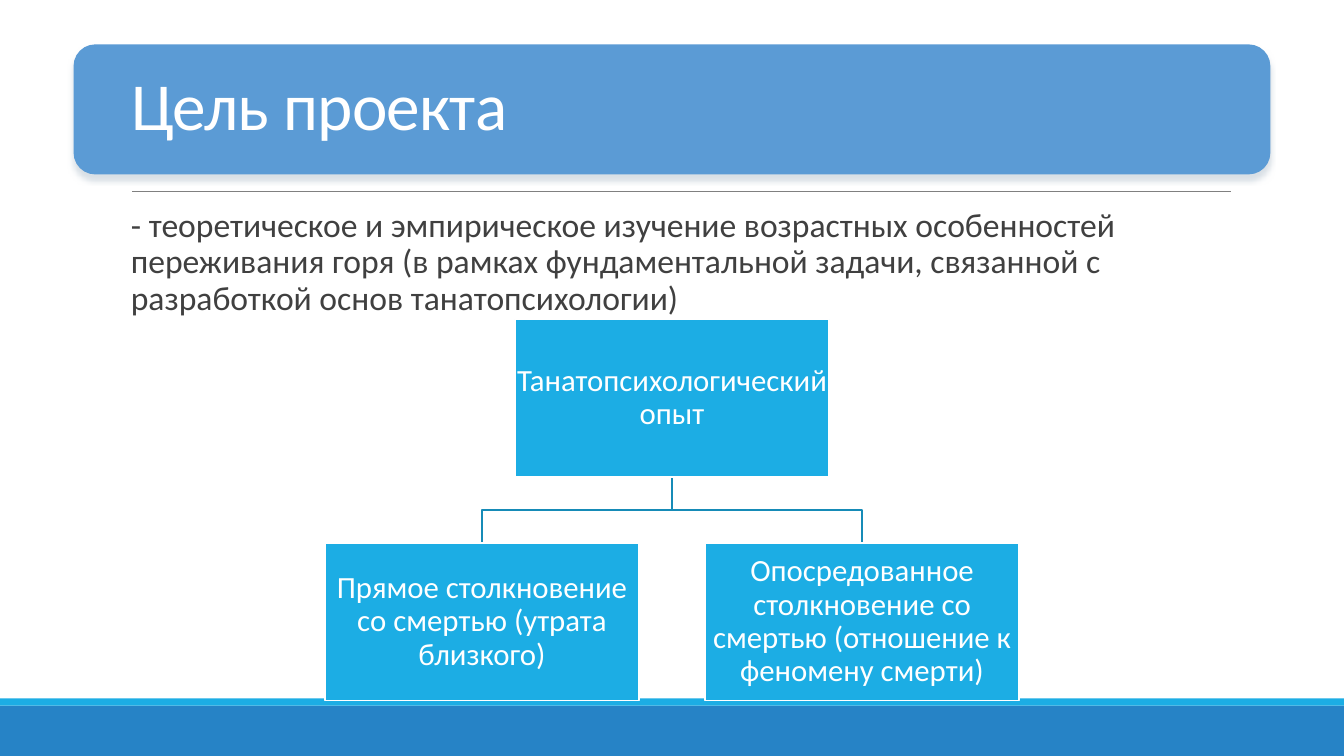
from lxml.etree import SubElement
from pptx import Presentation
from pptx.dml.color import RGBColor
from pptx.enum.shapes import MSO_CONNECTOR, MSO_SHAPE
from pptx.enum.text import MSO_ANCHOR, MSO_AUTO_SIZE, PP_ALIGN
from pptx.oxml.ns import qn
from pptx.util import Inches, Pt

TITLE = "Цель проекта"
GOAL = ("- теоретическое и эмпирическое изучение возрастных особенностей "
        "переживания горя (в рамках фундаментальной задачи, связанной с "
        "разработкой основ танатопсихологии)")
ROOT = "Танатопсихологический опыт"
BRANCHES = ["Прямое столкновение со смертью (утрата близкого)",
            "Опосредованное столкновение со смертью (отношение к феномену смерти)"]


class Theme:
    font = "Calibri"
    white, text, rule = "FFFFFF", "404040", "808080"
    accent, footer, banner = "1CADE4", "2683C6", "5B9BD5"
    link, shadow = "168BB7", "D9E0E6"
    title_size, goal_size, node_size = 48, 24, 22
    rule_width, node_width = 0.5, 1.25


WIDTH, HEIGHT = 13.33, 7.5
FOOTER_TOP, STRIPE = 7, 0.07
TEXT_LEFT, TEXT_WIDTH = 1.2, 11
NODE_W, NODE_H = 3.12, 1.56
COL_STEP, ROW_STEP = 3.77, 2.22
TREE_TOP = 3.17


def color(value):
    return RGBColor.from_string(value)


def add_block(s, kind, box, fill, line=None):
    sp = s.shapes.add_shape(kind, *map(Inches, box))
    sp.shadow.inherit = False
    sp.fill.solid()
    sp.fill.fore_color.rgb = color(fill)
    if line:
        sp.line.color.rgb = color(line)
        sp.line.width = Pt(Theme.node_width)
    else:
        sp.line.fill.background()
    return sp


def write(sp, text, size, rgb, spacing, margins, anchor, align=PP_ALIGN.LEFT):
    tf = sp.text_frame
    left, top = margins
    frame = {"word_wrap": True, "auto_size": MSO_AUTO_SIZE.NONE,
             "vertical_anchor": anchor,
             "margin_left": Inches(left), "margin_right": Inches(left),
             "margin_top": Inches(top), "margin_bottom": Inches(top)}
    for name, value in frame.items():
        setattr(tf, name, value)
    p = tf.paragraphs[0]
    p.alignment, p.line_spacing = align, spacing
    r = p.add_run()
    r.text = text
    for name, value in {"name": Theme.font, "size": Pt(size), "bold": False}.items():
        setattr(r.font, name, value)
    r.font.color.rgb = color(rgb)
    return r


def add_shadow(sp):
    effects = sp.element.spPr.find(qn("a:effectLst"))
    shadow = SubElement(effects, qn("a:outerShdw"), blurRad=str(Pt(4)),
                        dist=str(Pt(4)), dir="5400000", rotWithShape="0")
    SubElement(shadow, qn("a:srgbClr"), val=Theme.shadow)


def add_node(s, text, center, top):
    box = (center - NODE_W / 2, top, NODE_W, NODE_H)
    sp = add_block(s, MSO_SHAPE.RECTANGLE, box, Theme.accent, Theme.white)
    write(sp, text, Theme.node_size, Theme.white, 0.9, (0.02, 0.02),
          MSO_ANCHOR.MIDDLE, PP_ALIGN.CENTER)


def add_branch_line(s, start, end):
    (x1, y1), (x2, y2) = start, end
    middle = (y1 + y2) / 2
    points = [(Inches(x), Inches(y)) for x, y in
              [(x1, y1), (x1, middle), (x2, middle), (x2, y2)]]
    builder = s.shapes.build_freeform(*points[0])
    builder.add_line_segments(points[1:], close=False)
    sp = builder.convert_to_shape()
    sp.shadow.inherit = False
    sp.fill.background()
    sp.line.color.rgb = color(Theme.link)
    sp.line.width = Pt(Theme.node_width)


def add_frame(s):
    """Draw the footer bands, the rule and the title banner."""
    add_block(s, MSO_SHAPE.RECTANGLE,
              (0, FOOTER_TOP, WIDTH, HEIGHT - FOOTER_TOP), Theme.footer)
    add_block(s, MSO_SHAPE.RECTANGLE,
              (0, FOOTER_TOP - STRIPE, WIDTH, STRIPE), Theme.accent)
    rule = s.shapes.add_connector(MSO_CONNECTOR.STRAIGHT,
                                  *map(Inches, (1.31, 1.9, 12.21, 1.9)))
    rule.line.color.rgb = color(Theme.rule)
    rule.line.width = Pt(Theme.rule_width)
    SubElement(rule.element.spPr, qn("a:effectLst"))
    banner = add_block(s, MSO_SHAPE.ROUNDED_RECTANGLE,
                       (0.73, 0.44, 11.87, 1.29), Theme.banner)
    add_shadow(banner)


def add_texts(s):
    title = s.shapes.title
    title.element.getparent().append(title.element)
    title.left, title.top, title.width, title.height = map(
        Inches, (TEXT_LEFT, 0.53, TEXT_WIDTH, 0.95))
    r = write(title, TITLE, Theme.title_size, Theme.white, 0.85, (0.1, 0.05),
              MSO_ANCHOR.BOTTOM)
    r.font.element.set("spc", "-50") if hasattr(r.font, "element") else \
        r.font._rPr.set("spc", "-50")
    goal = s.shapes.add_textbox(*map(Inches, (TEXT_LEFT, 2.02, TEXT_WIDTH, 1.15)))
    write(goal, GOAL, Theme.goal_size, Theme.text, 0.9, (0, 0.05), MSO_ANCHOR.TOP)
    goal.text_frame.margin_left = Inches(0.1)


def add_tree(s):
    center = WIDTH / 2
    child_top = TREE_TOP + ROW_STEP
    centers = [center + (i - (len(BRANCHES) - 1) / 2) * COL_STEP
               for i in range(len(BRANCHES))]
    for x in centers:
        add_branch_line(s, (center, TREE_TOP + NODE_H), (x, child_top))
    add_node(s, ROOT, center, TREE_TOP)
    for text, x in zip(BRANCHES, centers):
        add_node(s, text, x, child_top)


def main():
    prs = Presentation()
    prs.slide_width, prs.slide_height = Inches(WIDTH), Inches(HEIGHT)
    s = prs.slides.add_slide(prs.slide_layouts[5])
    add_frame(s)
    add_texts(s)
    add_tree(s)
    prs.save("out.pptx")


if __name__ == "__main__":
    main()
